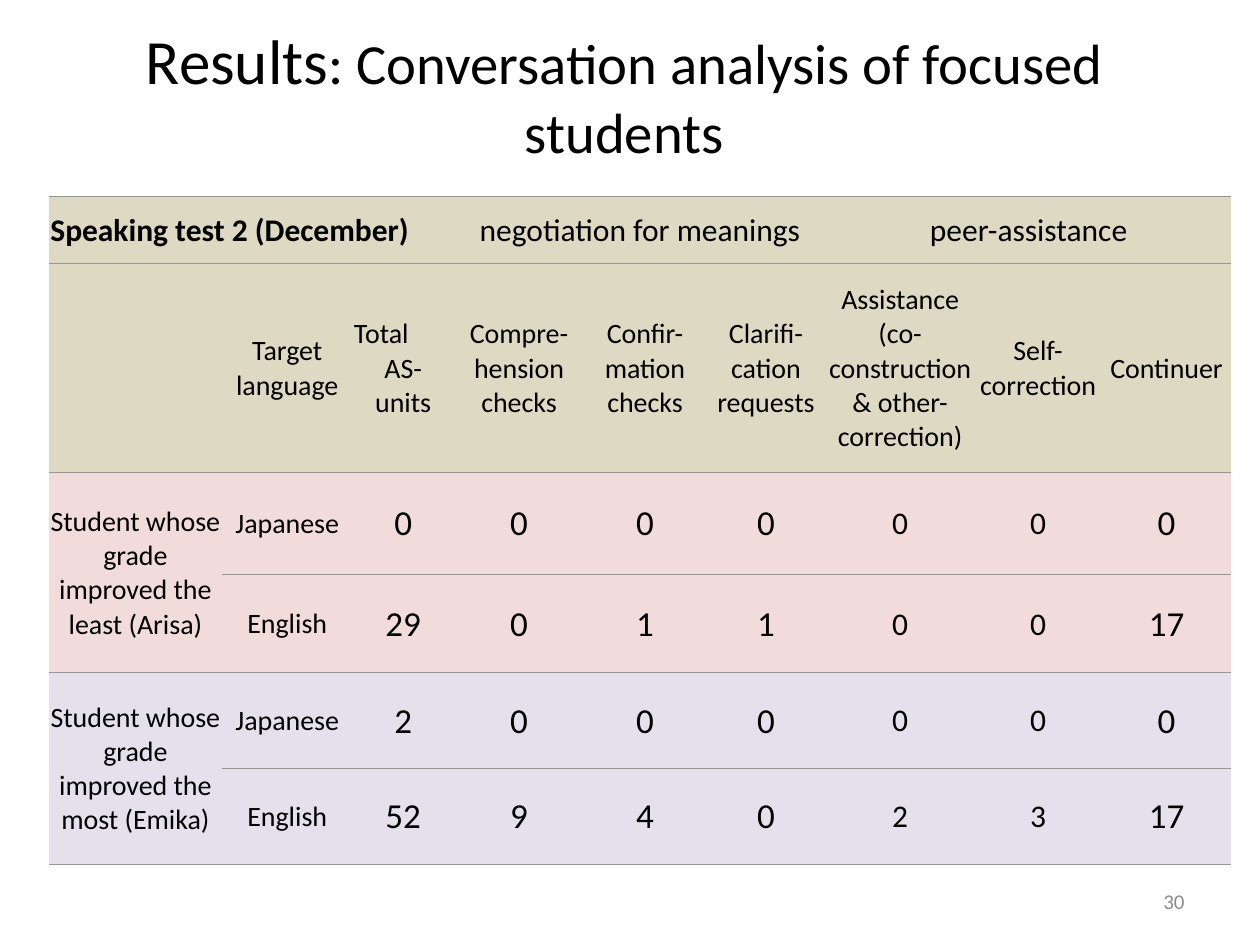
from dataclasses import dataclass
from typing import Any

from lxml import etree
from pptx import Presentation
from pptx import util as u
from pptx.dml.color import RGBColor
from pptx.enum import text
from pptx.oxml import ns

BLACK = RGBColor(0, 0, 0)
GRAY = RGBColor(0x8C, 0x8C, 0x8C)
RULE = RGBColor(0x96, 0x96, 0x96)
TAN = RGBColor(0xDD, 0xD9, 0xC3)
PINK = RGBColor(0xF2, 0xDC, 0xDB)
LILAC = RGBColor(0xE6, 0xE0, 0xEC)
FONT = "Calibri"
LEFT, MID, RIGHT = text.PP_ALIGN.LEFT, text.PP_ALIGN.CENTER, text.PP_ALIGN.RIGHT

WIDE, HIGH = u.Inches(10), u.Inches(7.5)
COLS = [13.7, 10.4, 8, 10.4, 9.6, 9.6, 11.7, 10.2, 10.2]
ROWS = [7.07, 22.13, 10.8, 10.4, 10.13, 10.13]
FILLS = [TAN, TAN, PINK, PINK, LILAC, LILAC]
SIZES = [16, 16, 20, 20, 20, 20, 18, 18, 20]


@dataclass
class Cell:
    row: int
    col: int
    words: str
    size: float = 16
    down: int = 1
    over: int = 1
    bold: bool = False
    align: Any = MID


@dataclass
class Group:
    name: str
    counts: dict[str, list[int]]


HEADS = ["Target language", "Total\nAS-\vunits", "Compre-hension checks",
         "Confir-mation checks", "Clarifi-cation requests",
         "Assistance (co-construction & other-correction)",
         "Self-correction", "Continuer"]
GROUPS = [
    Group("Student whose grade improved the least (Arisa)",
          {"Japanese": [0, 0, 0, 0, 0, 0, 0],
           "English": [29, 0, 1, 1, 0, 0, 17]}),
    Group("Student whose grade improved the most (Emika)",
          {"Japanese": [2, 0, 0, 0, 0, 0, 0],
           "English": [52, 9, 4, 0, 2, 3, 17]}),
]


def across(share: float) -> u.Emu:
    return u.Emu(round(WIDE * share / 100))


def along(share: float) -> u.Emu:
    return u.Emu(round(HIGH * share / 100))


def write(par: Any, words: str, *, size: float, color: RGBColor = BLACK,
          bold: bool = False, align: Any = MID) -> None:
    par.alignment = align
    for index, line in enumerate(words.split("\v")):
        if index:
            par.add_line_break()
        run = par.add_run()
        run.text = line
        run.font.name = FONT
        run.font.size = u.Pt(size)
        run.font.bold = bold
        run.font.color.rgb = color


def box(slide: Any, left: float, top: float, wide: float, high: float) -> Any:
    frame = slide.shapes.add_textbox(
        across(left), along(top), across(wide), along(high)).text_frame
    frame.word_wrap = True
    frame.vertical_anchor = text.MSO_ANCHOR.MIDDLE
    return frame.paragraphs[0]


def border(cell: Any, ruled: str) -> None:
    props = cell._tc.get_or_add_tcPr()
    for side in "LRTB":
        line = etree.SubElement(props, ns.qn(f"a:ln{side}"), w=str(u.Pt(0.5)))
        if side in ruled:
            fill = etree.SubElement(line, ns.qn("a:solidFill"))
            etree.SubElement(fill, ns.qn("a:srgbClr"), val=str(RULE))
        else:
            etree.SubElement(line, ns.qn("a:noFill"))


def place(table: Any, item: Cell) -> None:
    cell = table.cell(item.row, item.col)
    if item.down * item.over > 1:
        cell.merge(table.cell(item.row + item.down - 1,
                              item.col + item.over - 1))
    frame = cell.text_frame
    lines = item.words.split("\n")
    for index, line in enumerate(lines):
        par = frame.add_paragraph() if index else frame.paragraphs[0]
        align = LEFT if index < len(lines) - 1 else item.align
        write(par, line, size=item.size, bold=item.bold, align=align)


def layout() -> list[Cell]:
    cells = [
        Cell(0, 0, "Speaking test 2 (December)", 18, over=3, bold=True,
             align=LEFT),
        Cell(0, 3, "negotiation for meanings", 18, over=3),
        Cell(0, 6, "peer-assistance", 18, over=3),
    ]
    cells += [Cell(1, col, head) for col, head in enumerate(HEADS, 1)]
    for index, group in enumerate(GROUPS):
        first = 2 + 2 * index
        cells.append(Cell(first, 0, group.name, down=2))
        for row, (tongue, counts) in enumerate(group.counts.items(), first):
            cells.append(Cell(row, 1, tongue))
            cells += [Cell(row, col, str(count), SIZES[col])
                      for col, count in enumerate(counts, 2)]
    return cells


def grid(slide: Any) -> None:
    table = slide.shapes.add_table(
        len(ROWS), len(COLS), across(3.9), along(20.8),
        across(sum(COLS)), along(sum(ROWS))).table
    table.first_row = table.horz_banding = False
    for col, share in zip(table.columns, COLS):
        col.width = across(share)
    for row, share in zip(table.rows, ROWS):
        row.height = along(share)
    for item in layout():
        place(table, item)
    for row, color in enumerate(FILLS):
        for col in range(len(COLS)):
            cell = table.cell(row, col)
            inner = cell.is_spanned and col == 0
            border(cell, "B" if inner else "TB")
            cell.fill.solid()
            cell.fill.fore_color.rgb = color
            cell.vertical_anchor = text.MSO_ANCHOR.MIDDLE
            cell.margin_left = cell.margin_right = u.Inches(0.01)
            cell.margin_top, cell.margin_bottom = u.Inches(0.01), 0


def main() -> None:
    deck = Presentation()
    deck.slide_width, deck.slide_height = WIDE, HIGH
    slide = deck.slides.add_slide(deck.slide_layouts[6])
    title = box(slide, 2.3, 4.13, 94.5, 11.47)
    write(title, "Results", size=36)
    write(title, ": Conversation analysis of focused students", size=32.4)
    grid(slide)
    write(box(slide, 71.7, 92.67, 23.3, 5.33), "30", size=12, color=GRAY,
          align=RIGHT)
    deck.save("out.pptx")


if __name__ == "__main__":
    main()
